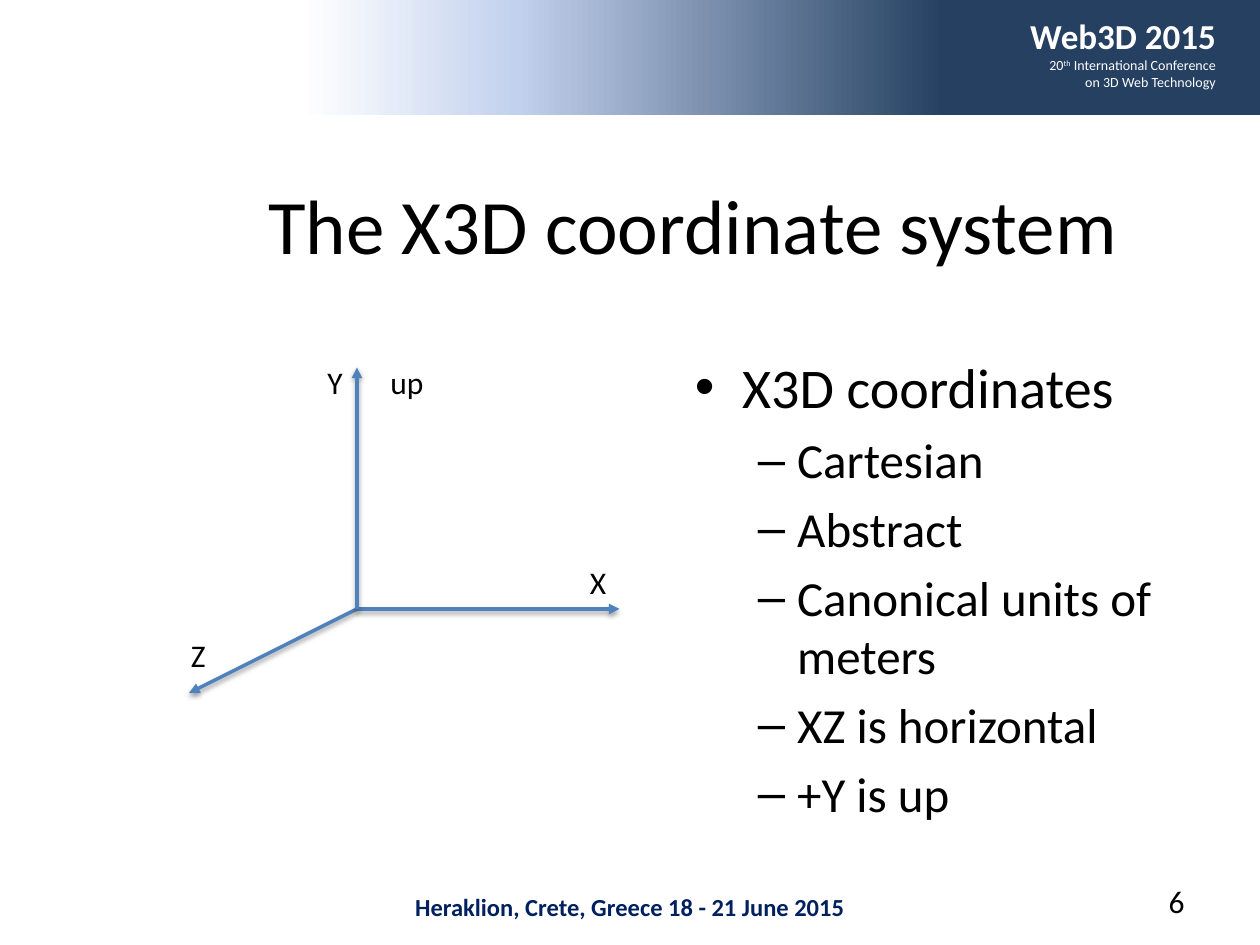
from pptx import Presentation
from pptx.dml.color import RGBColor
from pptx.enum.shapes import MSO_CONNECTOR as Connector, MSO_SHAPE as Shape
from pptx.enum.text import MSO_ANCHOR as Anchor, PP_ALIGN as Align
from pptx.oxml import parse_xml
from pptx.oxml.ns import nsdecls
from pptx.util import Pt

BLACK = RGBColor(0x00, 0x00, 0x00)
WHITE = RGBColor(0xFF, 0xFF, 0xFF)
NAVY = RGBColor(0x25, 0x40, 0x61)
PALE = RGBColor(0xC2, 0xD1, 0xED)
BLUE = RGBColor(0x4F, 0x81, 0xBD)
FOOTER = RGBColor(0x00, 0x20, 0x60)


class SlideBuilder:
    """Draws styled elements on one slide, with lengths in points."""

    font = "Calibri"
    bullets = {0: ("•", 27, 27, 32), 1: ("–", 58.5, 22.5, 28)}

    def __init__(self, slide):
        self.slide = slide

    def format(self, paragraph, size, color=BLACK, bold=False, align=Align.LEFT):
        paragraph.alignment = align
        for run in paragraph.runs:
            run.font.name = self.font
            run.font.size = Pt(size)
            run.font.bold = bold
            run.font.color.rgb = color

    def frame(self, left, top, width, height, wrap=True, anchor=Anchor.TOP):
        box = self.slide.shapes.add_textbox(Pt(left), Pt(top), Pt(width), Pt(height))
        box.text_frame.word_wrap = wrap
        box.text_frame.vertical_anchor = anchor
        return box.text_frame

    def text(self, bounds, text, size, wrap=True, anchor=Anchor.TOP, **style):
        text_frame = self.frame(*bounds, wrap, anchor)
        text_frame.text = text
        self.format(text_frame.paragraphs[0], size, **style)
        return text_frame

    def band(self, left, top, width, height, stops):
        shape = self.slide.shapes.add_shape(
            Shape.RECTANGLE, Pt(left), Pt(top), Pt(width), Pt(height))
        shape.shadow.inherit = False
        shape.line.fill.background()
        shape.fill.gradient()
        shape.fill.gradient_angle = 180
        stop_list = shape._element.spPr.find(".//{*}gsLst")
        for stop in list(stop_list):
            stop_list.remove(stop)
        for position, color in stops:
            stop_list.append(parse_xml(
                f'<a:gs {nsdecls("a")} pos="{position * 1000}">'
                f'<a:srgbClr val="{color}"/></a:gs>'))

    def arrow(self, start, end):
        connector = self.slide.shapes.add_connector(
            Connector.STRAIGHT, *(Pt(value) for value in (*start, *end)))
        connector.line.color.rgb = BLUE
        connector.line.width = Pt(2)
        connector.line._get_or_add_ln().append(
            parse_xml(f'<a:tailEnd {nsdecls("a")} type="triangle"/>'))
        connector._element.spPr.append(parse_xml(
            f'<a:effectLst {nsdecls("a")}>'
            f'<a:outerShdw blurRad="{Pt(3.1)}" dist="{Pt(1.6)}" dir="5400000" rotWithShape="0">'
            f'<a:srgbClr val="{BLACK}"><a:alpha val="38000"/></a:srgbClr>'
            '</a:outerShdw></a:effectLst>'))

    def bullet_list(self, bounds, items):
        text_frame = self.frame(*bounds)
        text_frame.text = "\n".join(text for _, text in items)
        for index, (level, _) in enumerate(items):
            paragraph = text_frame.paragraphs[index]
            mark, margin, hanging, size = self.bullets[level]
            paragraph.level = level
            if index:
                paragraph.space_before = Pt(size * 0.2)
            properties = paragraph._p.get_or_add_pPr()
            properties.set("marL", str(Pt(margin)))
            properties.set("indent", str(-Pt(hanging)))
            properties.append(parse_xml(f'<a:buFont {nsdecls("a")} typeface="Arial"/>'))
            properties.append(parse_xml(f'<a:buChar {nsdecls("a")} char="{mark}"/>'))
            self.format(paragraph, size)

    def conference(self, bounds, name, subtitle):
        text_frame = self.text(bounds, name, 20, color=WHITE, bold=True, align=Align.RIGHT)
        for line in subtitle:
            paragraph = text_frame.add_paragraph()
            for text, baseline in line:
                run = paragraph.add_run()
                run.text = text
                if baseline:
                    run._r.get_or_add_rPr().set("baseline", str(baseline * 1000))
            self.format(paragraph, 8, WHITE, align=Align.RIGHT)


def main():
    presentation = Presentation()
    presentation.slide_width, presentation.slide_height = Pt(720), Pt(540)
    builder = SlideBuilder(presentation.slides.add_slide(presentation.slide_layouts[6]))

    builder.text((0, 506, 720, 24.5), "Heraklion, Crete, Greece 18 - 21 June 2015", 14,
                 color=FOOTER, bold=True, align=Align.CENTER)
    builder.band(0, 0, 720, 66, [(25, NAVY), (59, PALE), (76, WHITE)])
    builder.conference((468, 5, 234, 51), "Web3D 2015", [
        [("20", 0), ("th", 30), (" International Conference", 0)],
        [("on 3D Web Technology", 0)],
    ])
    builder.text((72, 83, 648, 90), "The X3D coordinate system", 44,
                 anchor=Anchor.MIDDLE, align=Align.CENTER)

    origin = (204, 348)
    for tip in ((108, 396), (354, 348), (204, 210)):
        builder.arrow(origin, tip)
    for label, left, top, width in (("X", 330, 318, 24), ("Y", 180, 204, 24),
                                    ("Z", 102, 360, 23), ("up", 216, 204, 34)):
        builder.text((left, top, width, 29), label, 18, wrap=False)

    builder.bullet_list((390, 198, 294, 356), [
        (0, "X3D coordinates"),
        (1, "Cartesian"),
        (1, "Abstract"),
        (1, "Canonical units of meters"),
        (1, "XZ is horizontal"),
        (1, "+Y is up"),
    ])
    builder.text((516, 500.5, 168, 29), "6", 18, align=Align.RIGHT)
    presentation.save("out.pptx")


if __name__ == "__main__":
    main()
